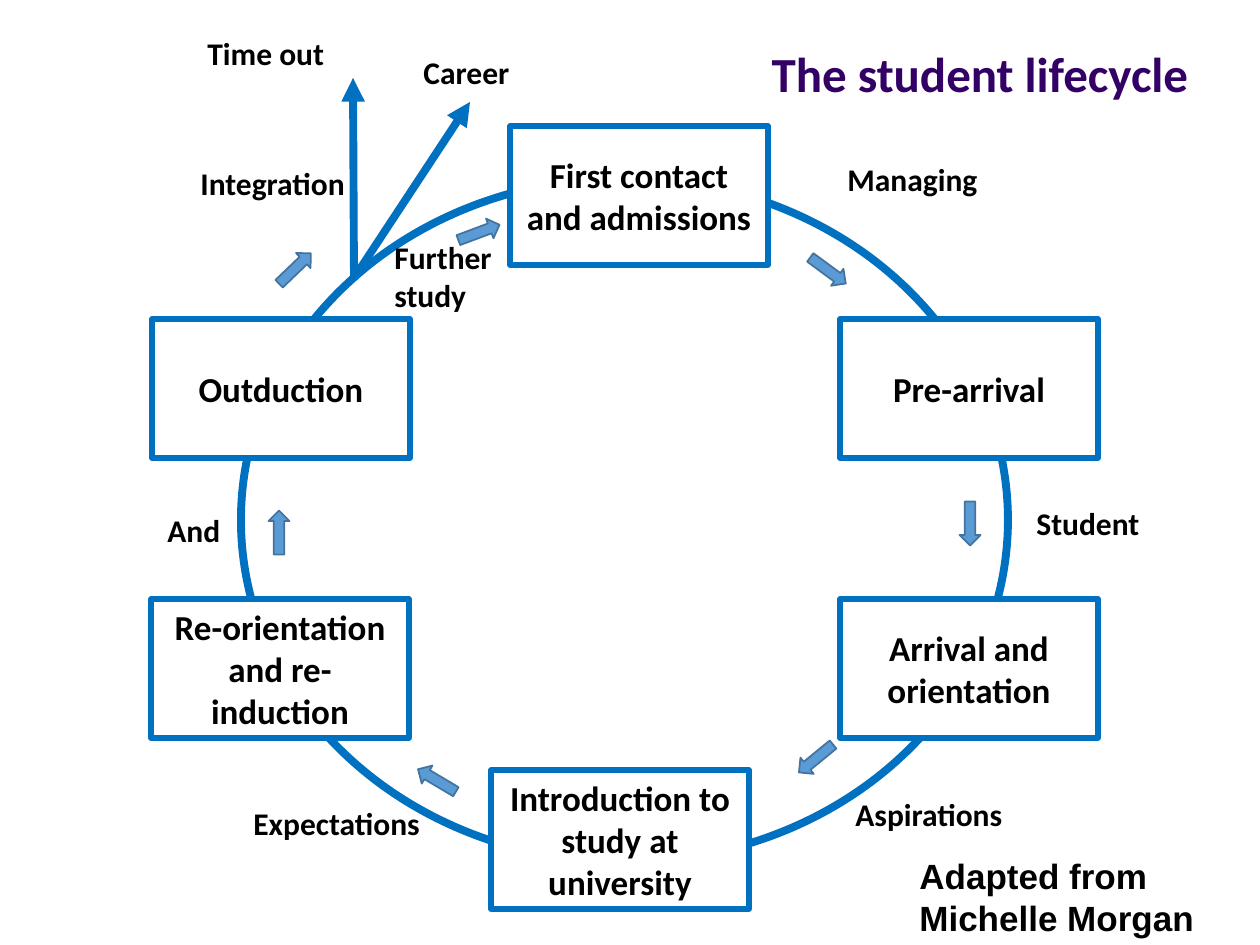
from lxml import etree
from pptx import Presentation
from pptx.dml.color import RGBColor
from pptx.enum.shapes import MSO_CONNECTOR, MSO_SHAPE
from pptx.enum.text import MSO_ANCHOR, MSO_AUTO_SIZE, PP_ALIGN
from pptx.oxml.ns import qn
from pptx.util import Emu, Pt

RECTANGLE, OVAL, ARROW = MSO_SHAPE.RECTANGLE, MSO_SHAPE.OVAL, MSO_SHAPE.RIGHT_ARROW
STRAIGHT = MSO_CONNECTOR.STRAIGHT
LEFT, CENTER = PP_ALIGN.LEFT, PP_ALIGN.CENTER
TOP, MIDDLE = MSO_ANCHOR.TOP, MSO_ANCHOR.MIDDLE
FIT_SHAPE = MSO_AUTO_SIZE.SHAPE_TO_FIT_TEXT

EMU_PER_PX = 914400 / 126
SLIDE_SIZE = (1260, 945)
BLUE, BLACK, PURPLE, WHITE = "0070C0", "000000", "330066", "FFFFFF"
ARROW_FILL, ARROW_LINE = "5B9BD5", "43739E"

CYCLE = (241, 178, 767, 684)
STAGE_SIZE = (258, 139)
LEFT_X, RIGHT_X, UPPER_Y, LOWER_Y = 152, 840, 319, 599
STAGES = [
    ("First contact and admissions", 510, 126),
    ("Pre-arrival", RIGHT_X, UPPER_Y),
    ("Outduction", LEFT_X, UPPER_Y),
    ("Introduction to study at university", 491, 770),
    ("Re-orientation and re-induction", LEFT_X - 1, LOWER_Y),
    ("Arrival and orientation", RIGHT_X, LOWER_Y),
]
LABELS = [
    ("Further study", 382, 232, 200, 89),
    ("Career", 411, 47, 173, 50),
    ("Time out", 195, 28, 173, 50),
    ("Integration", 188, 158, 173, 50),
    ("Managing", 835, 154, 173, 50),
    ("Student", 1024, 498, 173, 50),
    ("Aspirations", 843, 789, 173, 50),
    ("Expectations", 241, 798, 223, 50),
    ("And", 155, 505, 173, 50),
]
EXIT_START = (354, 278)
EXIT_ENDS = [(353, 78), (470, 102)]
DIRECTION_SIZE = (44, 21)
DIRECTIONS = [
    (273, 258, 316.2),
    (415, 770, 210.7),
    (794, 748, 140.7),
    (948, 513, 90),
    (257, 522, 270),
    (806, 260, 36.3),
    (457, 222, 339.5),
]


def px(*lengths):
    """Turn pixel lengths into EMU."""
    return [Emu(round(length * EMU_PER_PX)) for length in lengths]


def color(hex_value):
    """Turn a hex string into a colour."""
    return RGBColor.from_string(hex_value)


def write(frame, text, size, hex_value=BLACK, font="Calibri", align=LEFT, anchor=TOP):
    """Fill a text frame with bold text in one style."""
    frame.text = text
    frame.vertical_anchor = anchor
    for paragraph in frame.paragraphs:
        paragraph.alignment = align
        for run in paragraph.runs:
            run.font.name = font
            run.font.size = Pt(size)
            run.font.bold = True
            run.font.color.rgb = color(hex_value)


def add_outlined(slide, kind, box, line, weight, fill=None):
    """Add a preset shape with an outline and an optional fill."""
    shape = slide.shapes.add_shape(kind, *px(*box))
    shape.shadow.inherit = False
    shape.line.color.rgb = color(line)
    shape.line.width = Pt(weight)
    if fill:
        shape.fill.solid()
        shape.fill.fore_color.rgb = color(fill)
    else:
        shape.fill.background()
    return shape


def add_stage(slide, name, left, top):
    """Add one stage box of the lifecycle."""
    stage = add_outlined(slide, RECTANGLE, (left, top, *STAGE_SIZE), BLUE, 3, WHITE)
    stage.text_frame.word_wrap = True
    write(stage.text_frame, name, 20, align=CENTER, anchor=MIDDLE)


def add_text(slide, text, box, size, font="Calibri", wrap=True):
    """Add a free-standing text box."""
    frame = slide.shapes.add_textbox(*px(*box)).text_frame
    frame.word_wrap = wrap
    frame.auto_size = FIT_SHAPE
    write(frame, text, size, font=font)


def add_exit(slide, end):
    """Add an arrow leading out of the cycle."""
    connector = slide.shapes.add_connector(STRAIGHT, *px(*EXIT_START, *end))
    connector.line.color.rgb = color(BLUE)
    connector.line.width = Pt(4.5)
    properties = connector._element.spPr
    etree.SubElement(properties.find(qn("a:ln")), qn("a:tailEnd"), type="triangle")
    etree.SubElement(properties, qn("a:effectLst"))


def add_direction(slide, left, top, angle):
    """Add a small block arrow showing the direction of travel."""
    box = (left, top, *DIRECTION_SIZE)
    arrow = add_outlined(slide, ARROW, box, ARROW_LINE, 1, ARROW_FILL)
    arrow.rotation = angle


def set_title(slide, text, box):
    """Move and format the title placeholder."""
    title = slide.shapes.title
    title.left, title.top, title.width, title.height = px(*box)
    title.text_frame.word_wrap = False
    title.text_frame.auto_size = FIT_SHAPE
    write(title.text_frame, text, 28, PURPLE)


def main():
    """Build the student lifecycle slide."""
    presentation = Presentation()
    presentation.slide_width, presentation.slide_height = px(*SLIDE_SIZE)
    slide = presentation.slides.add_slide(presentation.slide_layouts[5])
    set_title(slide, "The student lifecycle", (759, 37, 450, 72))
    add_outlined(slide, OVAL, CYCLE, BLUE, 4.5)
    for stage in STAGES:
        add_stage(slide, *stage)
    for label, *box in LABELS:
        add_text(slide, label, box, 18)
    for end in EXIT_ENDS:
        add_exit(slide, end)
    for direction in DIRECTIONS:
        add_direction(slide, *direction)
    credit = "Adapted from\nMichelle Morgan"
    add_text(slide, credit, (907, 848, 302, 97), 20, font="Arial", wrap=False)
    presentation.save("out.pptx")


if __name__ == "__main__":
    main()
